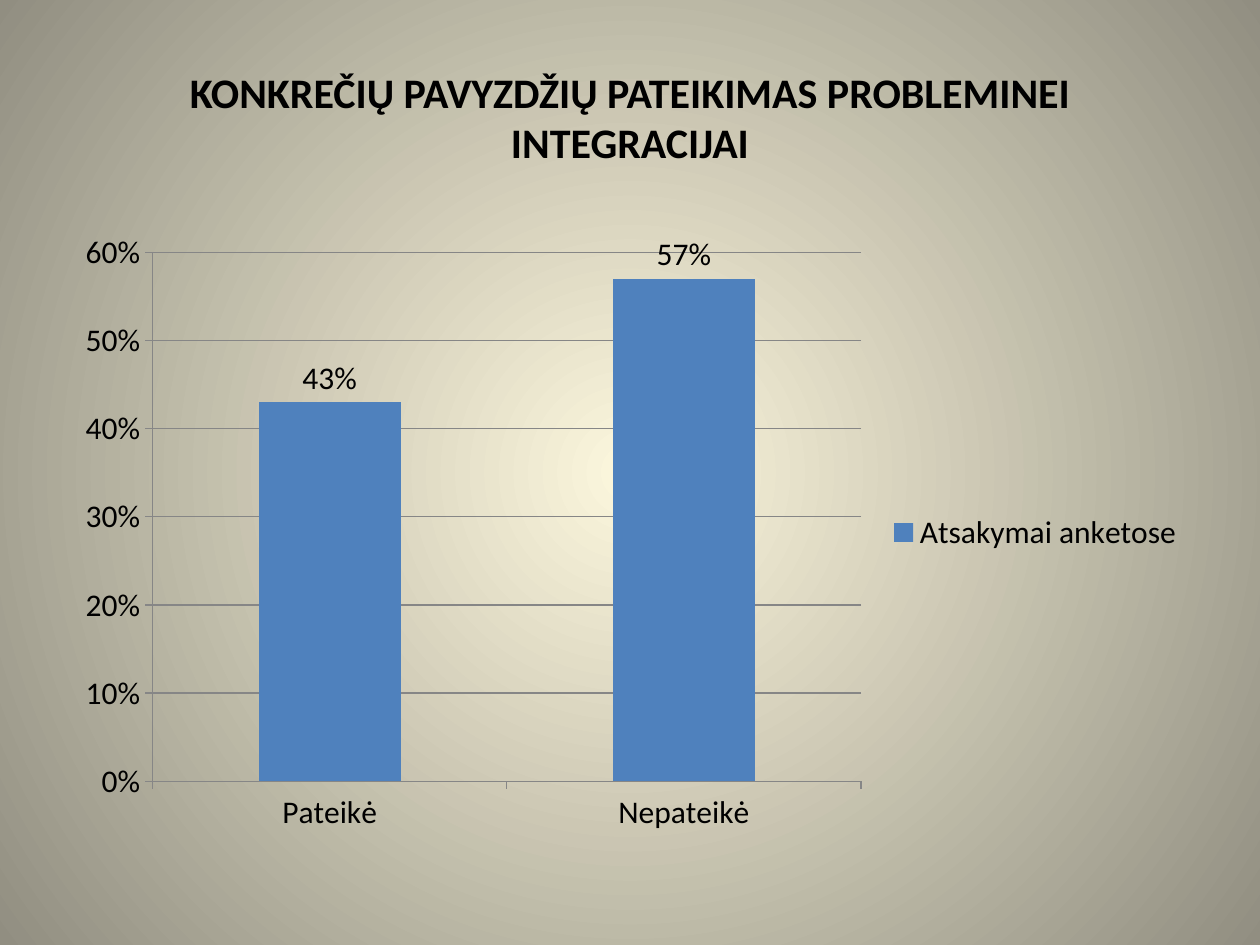
from lxml.etree import SubElement
from pptx import Presentation
from pptx.chart.data import CategoryChartData as Data
from pptx.dml.color import RGBColor as Rgb
from pptx.enum.chart import XL_CHART_TYPE as Kind, XL_LABEL_POSITION as Spot
from pptx.enum.chart import XL_LEGEND_POSITION as Side, XL_TICK_MARK as Tick
from pptx.enum.text import MSO_ANCHOR as Anchor, PP_ALIGN as Align
from pptx.oxml.ns import qn
from pptx.util import Cm, Pt

HUES = {
    "ink": "000000",
    "glow": "FCF7DD",
    "edge": "918E81",
    "bar": "4F81BD",
    "grid": "868686",
}


def hue(name):
    return Rgb.from_string(HUES[name])


def style(font, size, bold=False, color="ink", face="Calibri"):
    font.name = face
    font.size = Pt(size)
    font.bold = bold
    font.color.rgb = hue(color)


def write(frame, text, align=Align.CENTER, anchor=Anchor.MIDDLE, **look):
    frame.word_wrap = True
    frame.vertical_anchor = anchor
    par = frame.paragraphs[0]
    par.alignment = align
    run = par.add_run()
    run.text = text
    style(run.font, **look)


class Deck:
    percent = "0%"
    left, width = Cm(1.27), Cm(22.86)

    def __init__(self):
        self.file = Presentation()
        self.file.slide_width = Cm(25.4)
        self.file.slide_height = Cm(19.05)
        self.slide = self.file.slides.add_slide(self.file.slide_layouts[5])

    def ground(self, inner, outer):
        fill = self.slide.background.fill
        fill.gradient()
        for stop, name in zip(fill.gradient_stops, (inner, outer)):
            stop.color.rgb = hue(name)
        grad = self.slide.element.find(".//" + qn("a:gradFill"))
        grad.remove(grad.find(qn("a:lin")))
        ring = SubElement(grad, qn("a:path"), path="circle")
        SubElement(ring, qn("a:fillToRect"), dict.fromkeys("ltrb", "50000"))

    def title(self, text, top, height):
        box = self.slide.shapes.title
        box.left, box.top = self.left, top
        box.width, box.height = self.width, height
        write(box.text_frame, text, size=24, bold=True)

    def bars(self, name, points, top, height):
        data = Data(number_format=self.percent)
        data.categories = list(points)
        data.add_series(name, points.values())
        chart = self.slide.shapes.add_chart(
            Kind.COLUMN_CLUSTERED, self.left, top, self.width, height, data
        ).chart
        style(chart.font, size=18)
        chart.has_title = False
        chart.has_legend = True
        chart.legend.position = Side.RIGHT
        chart.legend.include_in_layout = False

        plot = chart.plots[0]
        plot.gap_width = 150
        plot.vary_by_categories = False
        fill = plot.series[0].format.fill
        fill.solid()
        fill.fore_color.rgb = hue("bar")
        plot.has_data_labels = True
        tags = plot.data_labels
        tags.show_value = True
        tags.number_format = self.percent
        tags.number_format_is_linked = False
        tags.position = Spot.OUTSIDE_END

        scale = chart.value_axis
        scale.minimum_scale, scale.maximum_scale = 0, 0.6
        scale.major_unit = 0.1
        scale.tick_labels.number_format = self.percent
        scale.tick_labels.number_format_is_linked = False
        scale.has_major_gridlines = True
        for axis in (scale, chart.category_axis):
            axis.major_tick_mark = Tick.OUTSIDE
            axis.minor_tick_mark = Tick.NONE
        for part in (scale, chart.category_axis, scale.major_gridlines):
            part.format.line.color.rgb = hue("grid")
            part.format.line.width = Pt(0.75)


def main():
    deck = Deck()
    deck.ground("glow", "edge")
    deck.title(
        "KONKREČIŲ PAVYZDŽIŲ PATEIKIMAS PROBLEMINEI INTEGRACIJAI",
        top=Cm(0.76),
        height=Cm(3.18),
    )
    deck.bars(
        "Atsakymai anketose",
        {"Pateikė": 0.43, "Nepateikė": 0.57},
        top=Cm(4.45),
        height=Cm(12.57),
    )
    deck.file.save("out.pptx")


if __name__ == "__main__":
    main()
